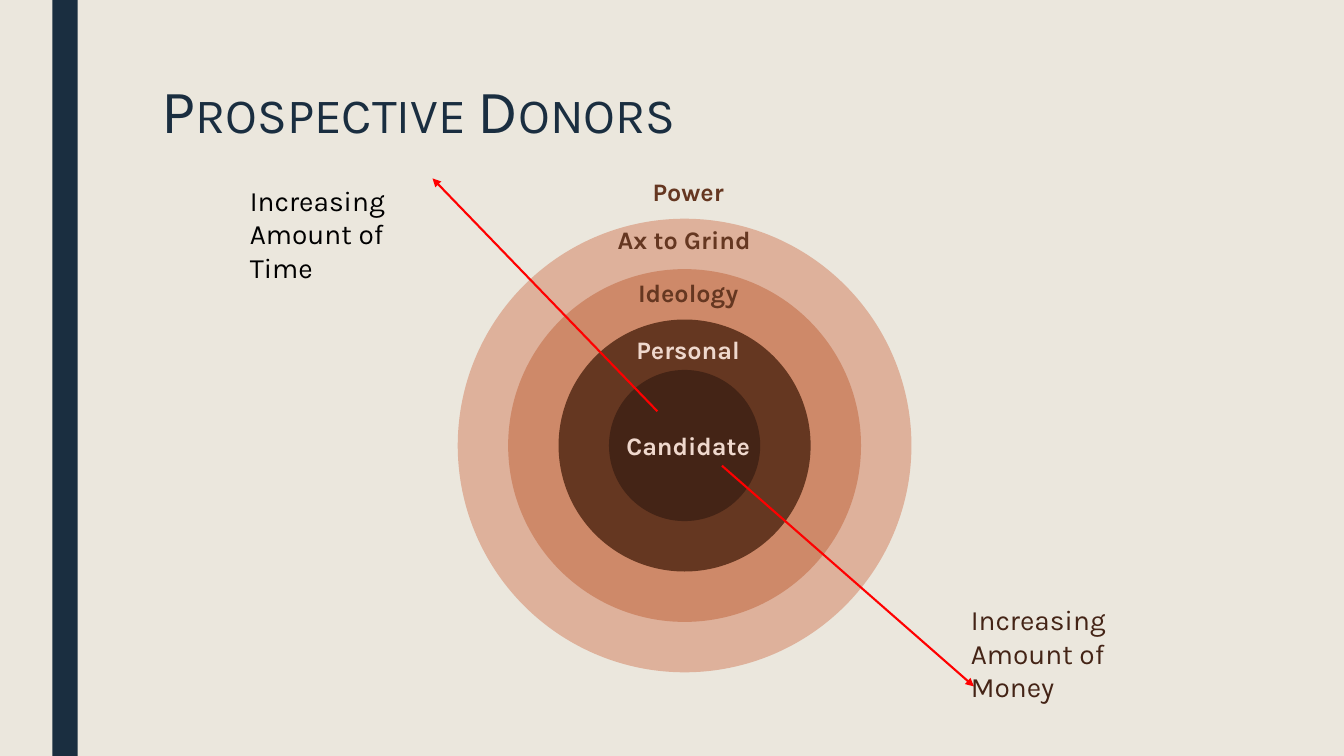
from dataclasses import dataclass

from lxml import etree
from pptx import Presentation
from pptx.dml.color import RGBColor
from pptx.enum.shapes import MSO_CONNECTOR, MSO_SHAPE
from pptx.enum.text import MSO_ANCHOR, MSO_AUTO_SIZE, PP_ALIGN
from pptx.oxml.ns import qn
from pptx.util import Inches, Pt

RECTANGLE, CIRCLE = MSO_SHAPE.RECTANGLE, MSO_SHAPE.FLOWCHART_CONNECTOR
STRAIGHT = MSO_CONNECTOR.STRAIGHT
TOP = MSO_ANCHOR.TOP
FIXED, GROW = MSO_AUTO_SIZE.NONE, MSO_AUTO_SIZE.SHAPE_TO_FIT_TEXT
LEFT, CENTER = PP_ALIGN.LEFT, PP_ALIGN.CENTER

FONT = "Karla"
COLORS = {
    "background": "EBE7DD",
    "navy": "1A2E40",
    "outer": "DEB19B",
    "middle": "CE8969",
    "brown": "653721",
    "dark": "442416",
    "pale": "EFD8CD",
    "red": "FF0000",
    "black": "000000",
}
CENTER_X, CENTER_Y = 6.79, 4.42
CORE_SIZE, RING_STEP = 1.5, 1.0
RINGS = ["outer", "middle", "brown", "dark"]


@dataclass
class Label:
    text: str
    left: float
    top: float
    width: float
    height: float
    color: str
    size: int = 18
    bold: bool = True
    align: PP_ALIGN = CENTER


@dataclass
class Arrow:
    start: tuple[float, float]
    end: tuple[float, float]


LABELS = [
    Label("Power", 5.59, 1.7, 2.47, 0.4, "brown"),
    Label("Ax to Grind", 6.01, 2.18, 1.55, 0.4, "brown"),
    Label("Ideology", 6.05, 2.7, 1.55, 0.4, "brown"),
    Label("Personal", 6.05, 3.27, 1.55, 0.4, "pale"),
    Label("Candidate", 6.05, 4.22, 1.55, 0.4, "pale"),
]
NOTES = [
    Label("Increasing Amount of Time", 2.38, 1.77, 2.13, 0.77, "black", 20, False, LEFT),
    Label("Increasing Amount of Money", 9.53, 5.93, 2.39, 0.77, "dark", 20, False, LEFT),
]
ARROWS = [
    Arrow((7.16, 4.62), (9.66, 6.81)),
    Arrow((6.52, 4.08), (4.29, 1.77)),
]


def color_of(name: str) -> RGBColor:
    return RGBColor.from_string(COLORS[name])


def write_text(box, text: str, *, size: int, color: str, bold: bool = False,
               align: PP_ALIGN = LEFT, fit: MSO_AUTO_SIZE = GROW,
               small_caps: bool = False, line_spacing: float = 1.0) -> None:
    frame = box.text_frame
    frame.word_wrap = True
    frame.auto_size = fit
    frame.vertical_anchor = TOP
    para = frame.paragraphs[0]
    para.alignment = align
    para.line_spacing = line_spacing
    span = para.add_run()
    span.text = text
    span.font.name = FONT
    span.font.size = Pt(size)
    span.font.bold = bold
    span.font.color.rgb = color_of(color)
    if small_caps:
        span.font._element.set("cap", "small")


def add_filled(page, kind: MSO_SHAPE, left: float, top: float,
               width: float, height: float, color: str) -> None:
    shape = page.shapes.add_shape(
        kind, Inches(left), Inches(top), Inches(width), Inches(height))
    shape.shadow.inherit = False
    shape.fill.solid()
    shape.fill.fore_color.rgb = color_of(color)
    shape.line.fill.background()


def add_label(page, label: Label) -> None:
    box = page.shapes.add_textbox(Inches(label.left), Inches(label.top),
                                  Inches(label.width), Inches(label.height))
    write_text(box, label.text, size=label.size, color=label.color,
               bold=label.bold, align=label.align)


def add_arrow(page, arrow: Arrow) -> None:
    points = [Inches(value) for value in (*arrow.start, *arrow.end)]
    connector = page.shapes.add_connector(STRAIGHT, *points)
    connector.line.color.rgb = color_of("red")
    connector.line.width = Pt(1.5)
    etree.SubElement(connector.line._get_or_add_ln(), qn("a:tailEnd"), type="triangle")
    etree.SubElement(connector._element.spPr, qn("a:effectLst"))


def main() -> None:
    deck = Presentation()
    deck.slide_width, deck.slide_height = Inches(13.33), Inches(7.5)
    page = deck.slides.add_slide(deck.slide_layouts.get_by_name("Title Only"))
    page.background.fill.solid()
    page.background.fill.fore_color.rgb = color_of("background")

    # Side bar and title
    add_filled(page, RECTANGLE, 0.52, 0, 0.25, 7.5, "navy")
    title = page.shapes.title
    title.left, title.top = Inches(1.5), Inches(0.75)
    title.width, title.height = Inches(10.5), Inches(1.62)
    write_text(title, "Prospective Donors", size=44, color="navy", fit=FIXED,
               small_caps=True, line_spacing=0.89)

    # Concentric rings, largest first
    for index, color in enumerate(RINGS):
        size = CORE_SIZE + RING_STEP * (len(RINGS) - 1 - index)
        add_filled(page, CIRCLE, CENTER_X - size / 2, CENTER_Y - size / 2,
                   size, size, color)

    # Ring labels, arrows and their notes
    for label in LABELS:
        add_label(page, label)
    for arrow in ARROWS:
        add_arrow(page, arrow)
    for note in NOTES:
        add_label(page, note)

    deck.save("out.pptx")


if __name__ == "__main__":
    main()
